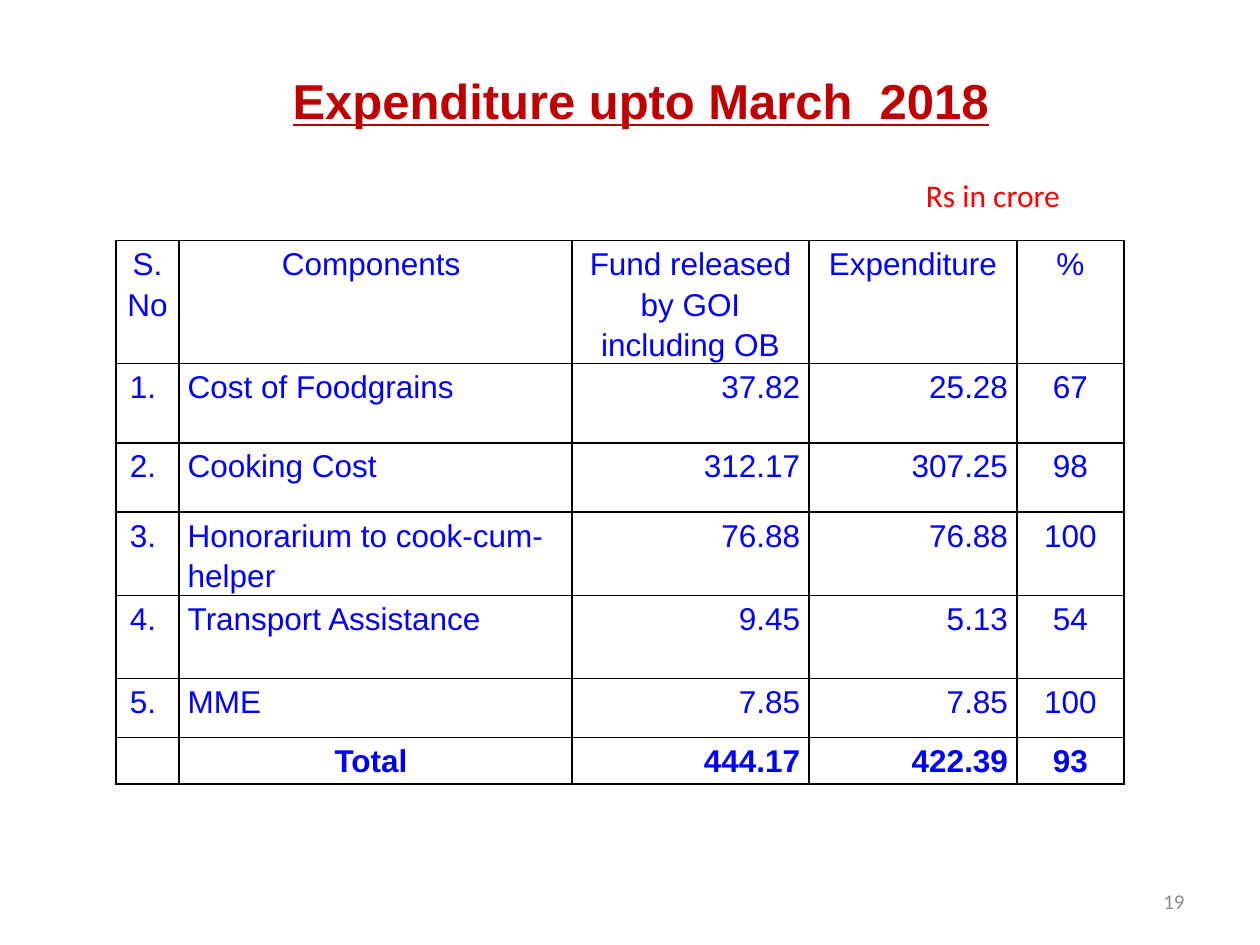
from lxml import etree
from pptx import Presentation
from pptx.dml.color import RGBColor
from pptx.enum.text import MSO_ANCHOR, PP_ALIGN
from pptx.oxml.ns import qn
from pptx.util import Inches, Pt

LEFT, CENTER, RIGHT = PP_ALIGN.LEFT, PP_ALIGN.CENTER, PP_ALIGN.RIGHT
TOP, MIDDLE = MSO_ANCHOR.TOP, MSO_ANCHOR.MIDDLE

COLORS = {"title": "C00000", "unit": "FF0000", "cell": "0000FF",
          "number": "8C8C8C", "border": "000000"}

# text, (left, top, width, height), alignment, anchor, run format
LABELS = [
    ("Expenditure upto March  2018", (1.25, 0.42, 7.67, 0.75), CENTER, MIDDLE,
     dict(font="Arial", size=28, color="title", bold=True, underline=True)),
    ("19", (7.17, 6.95, 2.33, 0.4), RIGHT, MIDDLE,
     dict(font="Calibri", size=12, color="number")),
    ("Rs in crore", (7.25, 1.35, 1.42, 0.4), LEFT, TOP,
     dict(font="Calibri", size=18, color="unit")),
]

ROWS = [
    ("S.\nNo ", "Components ", "Fund released by GOI including OB", "Expenditure", "%"),
    ("1. ", "Cost of Foodgrains", "37.82", "25.28", "67"),
    ("2. ", "Cooking Cost", "312.17", "307.25", "98"),
    ("3. ", "Honorarium to cook-cum-helper", "76.88", "76.88", "100"),
    ("4. ", "Transport Assistance", "9.45", "5.13", "54"),
    ("5. ", "MME", "7.85", "7.85", "100"),
    ("", "Total ", "444.17", "422.39", "93"),
]
TABLE_LEFT, TABLE_TOP = 0.92, 1.91
COL_WIDTHS = [0.5, 3.12, 1.88, 1.65, 0.85]
ROW_HEIGHTS = [0.67, 0.63, 0.55, 0.66, 0.66, 0.47, 0.37]
BODY_ALIGN = [CENTER, LEFT, RIGHT, RIGHT, CENTER]
LAST = len(ROWS) - 1


def add_run(p, text, font, size, color, bold=False, underline=False):
    r = p.add_run()
    r.text = text
    r.font.name, r.font.size = font, Pt(size)
    r.font.bold, r.font.underline = bold, underline
    r.font.color.rgb = RGBColor.from_string(COLORS[color])


def add_label(slide, text, box, align, anchor, fmt):
    tf = slide.shapes.add_textbox(*map(Inches, box)).text_frame
    tf.word_wrap = True
    tf.vertical_anchor = anchor
    p = tf.paragraphs[0]
    p.alignment = align
    add_run(p, text, **fmt)


def set_borders(cell):
    """Draw a 1 pt line on all four sides; lines must precede the fill."""
    tc_pr = cell._tc.get_or_add_tcPr()
    for i, side in enumerate(("lnL", "lnR", "lnT", "lnB")):
        ln = etree.Element(qn("a:" + side), w=str(Pt(1)))
        fill = etree.SubElement(ln, qn("a:solidFill"))
        etree.SubElement(fill, qn("a:srgbClr"), val=COLORS["border"])
        tc_pr.insert(i, ln)


def fill_cell(cell, text, align, bold):
    cell.margin_left = cell.margin_right = Inches(0.07)
    cell.margin_top, cell.margin_bottom = Inches(0.01), 0
    cell.vertical_anchor = TOP
    cell.fill.background()
    set_borders(cell)
    tf = cell.text_frame
    for i, line in enumerate(text.split("\n")):
        p = tf.add_paragraph() if i else tf.paragraphs[0]
        p.alignment, p.line_spacing = align, 1.15
        add_run(p, line, "Arial", 18, "cell", bold)


def add_expenditure_table(slide):
    table = slide.shapes.add_table(
        len(ROWS), len(COL_WIDTHS), Inches(TABLE_LEFT), Inches(TABLE_TOP),
        Inches(sum(COL_WIDTHS)), Inches(sum(ROW_HEIGHTS))).table
    table.first_row = table.horz_banding = False
    for col, width in zip(table.columns, COL_WIDTHS):
        col.width = Inches(width)
    for row, height in zip(table.rows, ROW_HEIGHTS):
        row.height = Inches(height)
    for i, texts in enumerate(ROWS):
        for j, text in enumerate(texts):
            centred = i == 0 or (i == LAST and j == 1)
            fill_cell(table.cell(i, j), text,
                      CENTER if centred else BODY_ALIGN[j], i == LAST)


def main():
    prs = Presentation()
    prs.slide_width, prs.slide_height = Inches(10), Inches(7.5)
    slide = prs.slides.add_slide(prs.slide_layouts[6])
    add_expenditure_table(slide)
    for label in LABELS:
        add_label(slide, *label)
    prs.save("out.pptx")


if __name__ == "__main__":
    main()
